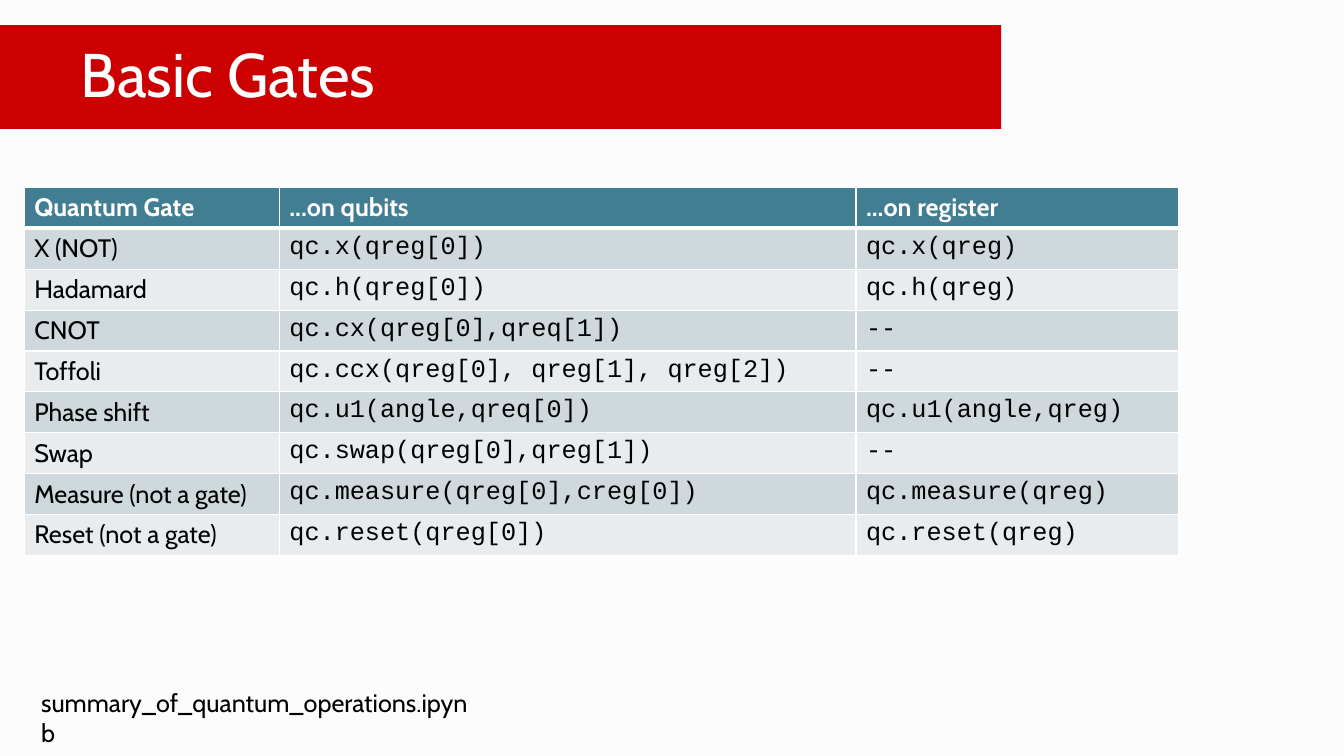
from dataclasses import dataclass

from lxml import etree
from pptx import Presentation
from pptx.dml.color import RGBColor
from pptx.enum.shapes import MSO_SHAPE
from pptx.enum.text import MSO_ANCHOR, MSO_AUTO_SIZE, PP_ALIGN
from pptx.oxml.ns import qn
from pptx.slide import Slide
from pptx.table import _Cell
from pptx.text.text import TextFrame
from pptx.util import Inches, Pt

RECTANGLE = MSO_SHAPE.RECTANGLE
MIDDLE = MSO_ANCHOR.MIDDLE
LEFT = PP_ALIGN.LEFT
GROW = MSO_AUTO_SIZE.SHAPE_TO_FIT_TEXT

TEXT_FONT, CODE_FONT = "Cabin", "Courier New"
WHITE, BLACK, RED, PAPER = "FFFFFF", "000000", "CC0000", "FCFCFC"
HEADER_FILL = "427E92"
BAND_FILLS = ("CFD8DC", "E9ECEE")

HEADINGS = ("Quantum Gate", "...on qubits", "...on register")
COLUMN_WIDTHS = (2.53, 5.72, 3.2)
TABLE_HEIGHT = 3.65


@dataclass(frozen=True)
class Gate:
    name: str
    on_qubits: str
    on_register: str = "--"


GATES = (
    Gate("X (NOT)", "qc.x(qreg[0])", "qc.x(qreg)"),
    Gate("Hadamard", "qc.h(qreg[0])", "qc.h(qreg)"),
    Gate("CNOT", "qc.cx(qreg[0],qreq[1])"),
    Gate("Toffoli", "qc.ccx(qreg[0], qreg[1], qreg[2])"),
    Gate("Phase shift", "qc.u1(angle,qreq[0])", "qc.u1(angle,qreg)"),
    Gate("Swap", "qc.swap(qreg[0],qreg[1])"),
    Gate("Measure (not a gate)", "qc.measure(qreg[0],creg[0])", "qc.measure(qreg)"),
    Gate("Reset (not a gate)", "qc.reset(qreg[0])", "qc.reset(qreg)"),
)


def color(value: str) -> RGBColor:
    return RGBColor.from_string(value)


def write(frame: TextFrame, text: str, ink: str, size: int = 18,
          font: str = TEXT_FONT, bold: bool = False) -> None:
    para = frame.paragraphs[0]
    para.alignment = LEFT
    span = para.add_run()
    span.text = text
    formats = {"name": font, "size": Pt(size), "bold": bold}
    for key, value in formats.items():
        setattr(span.font, key, value)
    span.font.color.rgb = color(ink)


def add_borders(cell: _Cell, widths: dict[str, int]) -> None:
    """Draw white cell borders; call before filling, as the XML order matters."""
    properties = cell._tc.get_or_add_tcPr()
    for side, width in widths.items():
        line = etree.SubElement(properties, qn(f"a:ln{side}"), w=str(Pt(width)))
        fill = etree.SubElement(line, qn("a:solidFill"))
        etree.SubElement(fill, qn("a:srgbClr"), val=WHITE)


def add_title(page: Slide) -> None:
    banner = page.shapes.add_shape(
        RECTANGLE, Inches(0), Inches(0.25), Inches(9.93), Inches(1.03))
    banner.shadow.inherit = False
    banner.fill.solid()
    banner.fill.fore_color.rgb = color(RED)
    banner.line.fill.background()
    frame = banner.text_frame
    formats = {"word_wrap": True, "vertical_anchor": MIDDLE, "margin_left": Inches(0.8)}
    for key, value in formats.items():
        setattr(frame, key, value)
    write(frame, "Basic Gates", WHITE, size=44)
    frame.paragraphs[0].line_spacing = 0.9


def add_gate_table(page: Slide) -> None:
    rows = [HEADINGS] + [(gate.name, gate.on_qubits, gate.on_register) for gate in GATES]
    table = page.shapes.add_table(
        len(rows), len(HEADINGS), Inches(0.24), Inches(1.86),
        Inches(sum(COLUMN_WIDTHS)), Inches(TABLE_HEIGHT)).table
    for column, width in zip(table.columns, COLUMN_WIDTHS):
        column.width = Inches(width)
    for row_index, texts in enumerate(rows):
        table.rows[row_index].height = Inches(TABLE_HEIGHT / len(rows))
        header = row_index == 0
        fill = HEADER_FILL if header else BAND_FILLS[(row_index - 1) % 2]
        top, bottom = 3 if row_index == 1 else 1, 3 if header else 1
        for column_index, text in enumerate(texts):
            cell = table.cell(row_index, column_index)
            add_borders(cell, {"L": 1, "R": 1, "T": top, "B": bottom})
            cell.fill.solid()
            cell.fill.fore_color.rgb = color(fill)
            font = TEXT_FONT if header or column_index == 0 else CODE_FONT
            write(cell.text_frame, text, WHITE if header else BLACK, font=font, bold=header)


def add_notebook_name(page: Slide) -> None:
    box = page.shapes.add_textbox(Inches(0.31), Inches(6.77), Inches(4.5), Inches(0.4))
    box.text_frame.word_wrap = True
    box.text_frame.auto_size = GROW
    write(box.text_frame, "summary_of_quantum_operations.ipynb", BLACK)


def main() -> None:
    deck = Presentation()
    deck.slide_width, deck.slide_height = Inches(13.33), Inches(7.5)
    page = deck.slides.add_slide(deck.slide_layouts[6])
    page.background.fill.solid()
    page.background.fill.fore_color.rgb = color(PAPER)
    add_title(page)
    add_gate_table(page)
    add_notebook_name(page)
    deck.save("out.pptx")


if __name__ == "__main__":
    main()
